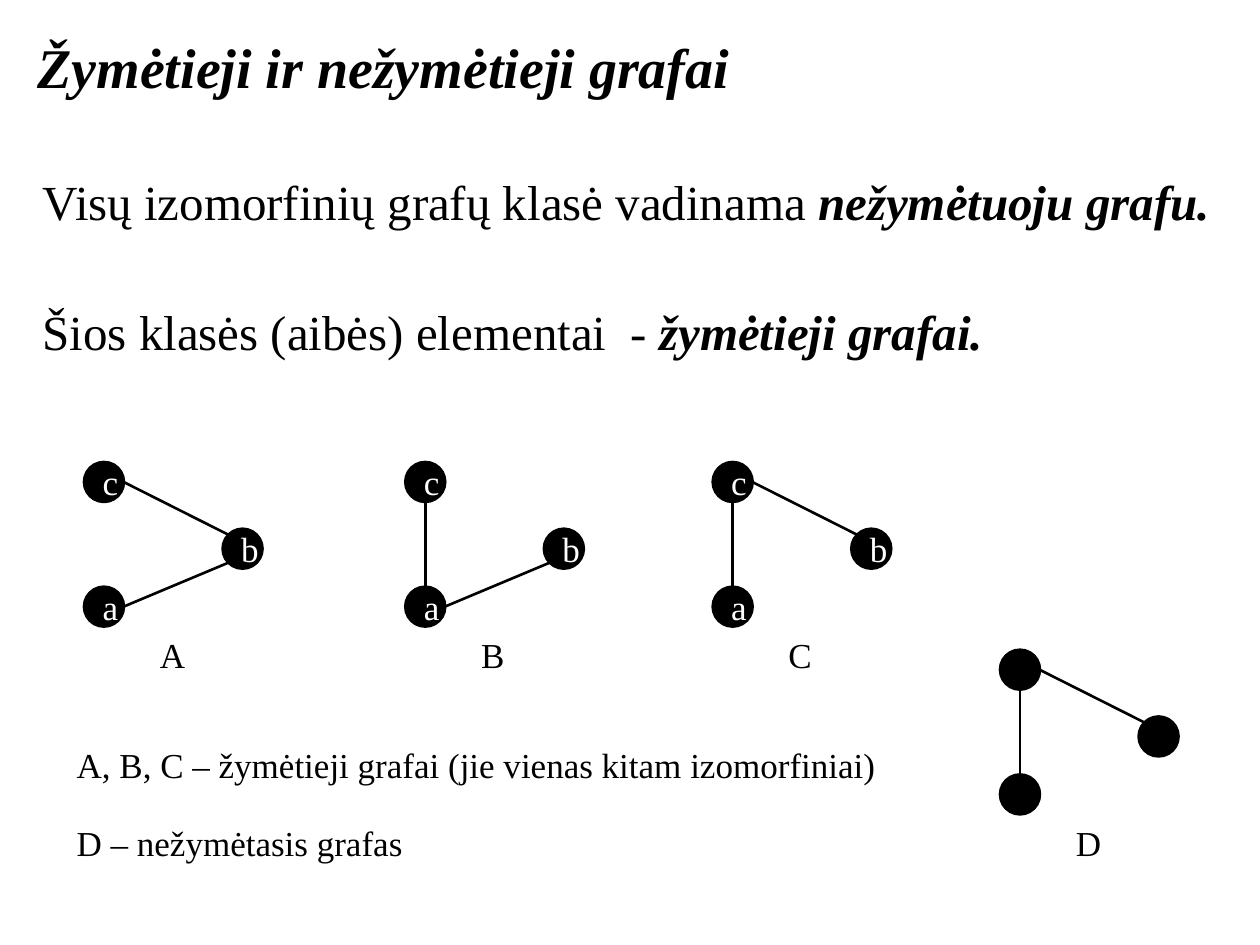
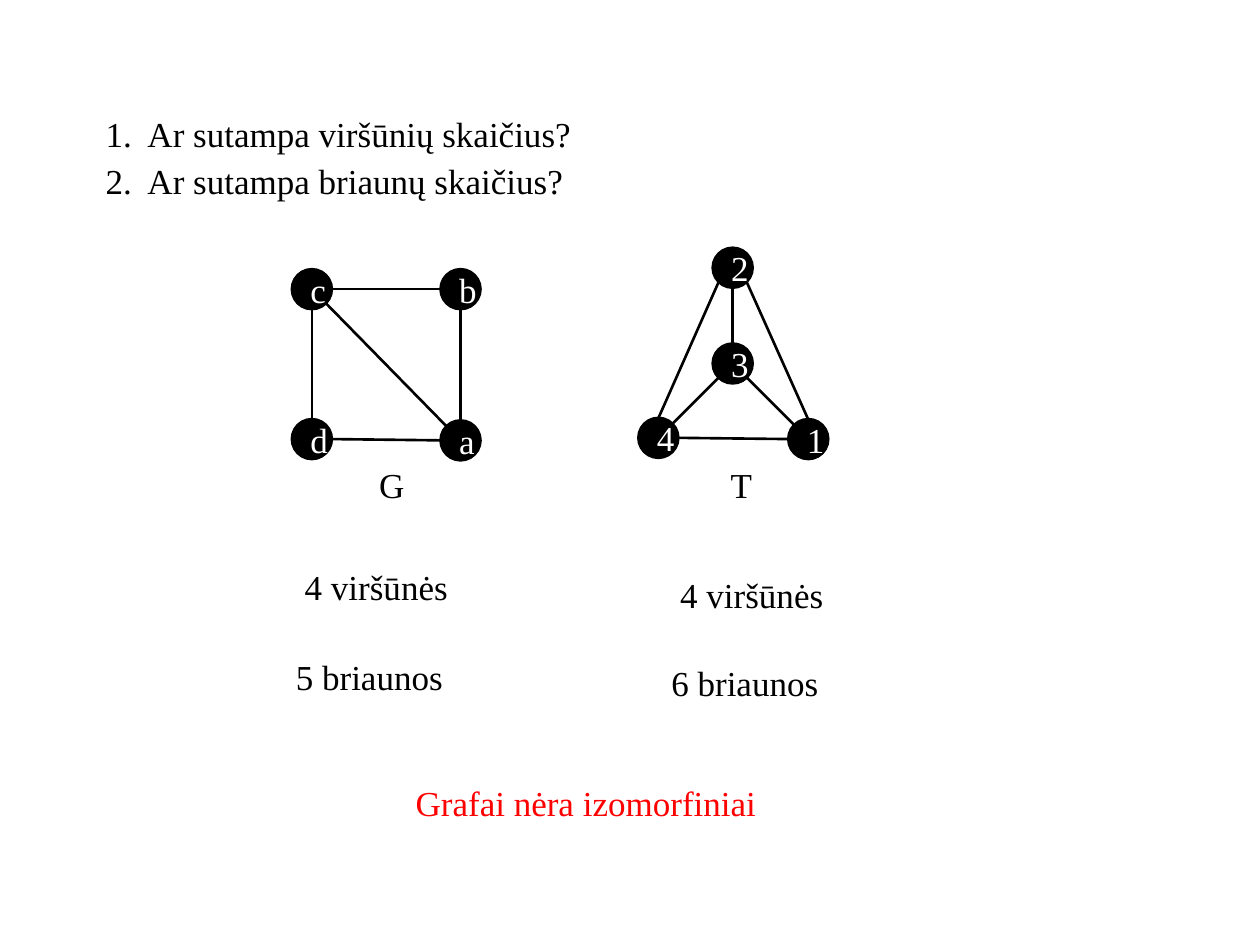
"""Build two slides on labelled, unlabelled and isomorphic graphs."""
import math

import pptx
import pptx.dml.color
import pptx.enum.shapes
import pptx.oxml.ns
import pptx.util
from lxml import etree

PX = 9144
BLACK = pptx.dml.color.RGBColor(0x00, 0x00, 0x00)
WHITE = pptx.dml.color.RGBColor(0xFF, 0xFF, 0xFF)
RED = pptx.dml.color.RGBColor(0xFF, 0x00, 0x00)
FONT = "Times New Roman"
BODY_SIZE = 20
LEAD_SIZE = 28
TITLE_SIZE = 32
VERTEX_SIZE = 31
SITE_ANGLES = {
    "right": 0, "bottom right": 45, "bottom": 90, "bottom left": 135,
    "left": 180, "top left": 225, "top": 270, "top right": 315,
}


def add_text(slide, left, top, width, height, runs, size=BODY_SIZE, colour=BLACK):
    box = slide.shapes.add_textbox(left * PX, top * PX, width * PX, height * PX)
    box.text_frame.word_wrap = True
    paragraph = box.text_frame.paragraphs[0]
    for text, emphasised in runs:
        run = paragraph.add_run()
        run.text = text
        run.font.name = FONT
        run.font.size = pptx.util.Pt(size)
        run.font.color.rgb = colour
        run.font.bold = run.font.italic = emphasised


def add_graph(slide, vertices, edges, labelled=True):
    radius = VERTEX_SIZE / 2
    for ends in edges:
        points = []
        for name, site in ends:
            left, top = vertices[name]
            angle = math.radians(SITE_ANGLES[site])
            points.append(round((left + radius + radius * math.cos(angle)) * PX))
            points.append(round((top + radius + radius * math.sin(angle)) * PX))
        edge = slide.shapes.add_connector(pptx.enum.shapes.MSO_CONNECTOR.STRAIGHT, *points)
        edge.line.color.rgb = BLACK
        edge.line.width = pptx.util.Pt(1.5)
        etree.SubElement(edge._element.spPr, pptx.oxml.ns.qn("a:effectLst"))
    for name, (left, top) in vertices.items():
        vertex = slide.shapes.add_shape(
            pptx.enum.shapes.MSO_SHAPE.OVAL,
            left * PX, top * PX, VERTEX_SIZE * PX, VERTEX_SIZE * PX)
        vertex.shadow.inherit = False
        vertex.fill.solid()
        vertex.fill.fore_color.rgb = BLACK
        vertex.line.color.rgb = BLACK
        vertex.line.width = pptx.util.Pt(2)
        if labelled:
            run = vertex.text_frame.paragraphs[0].add_run()
            run.text = name
            run.font.name = FONT
            run.font.size = pptx.util.Pt(BODY_SIZE)
            run.font.color.rgb = WHITE


presentation = pptx.Presentation()
presentation.slide_width = 1000 * PX
presentation.slide_height = 750 * PX
blank_layout = presentation.slide_layouts[6]

slide = presentation.slides.add_slide(blank_layout)
add_text(slide, 20, 21, 937, 64, [("Žymėtieji ir nežymėtieji grafai", True)], TITLE_SIZE)
add_text(slide, 24, 131, 965, 57, [
    ("Visų izomorfinių grafų klasė vadinama ", False),
    ("nežymėtuoju grafu.", True),
], LEAD_SIZE)
add_text(slide, 24, 234, 933, 57, [
    ("Šios klasės (aibės) elementai  - ", False),
    ("žymėtieji grafai.", True),
], LEAD_SIZE)

edge_cb = (("c", "right"), ("b", "top left"))
edge_ab = (("a", "right"), ("b", "bottom left"))
edge_ca = (("c", "bottom"), ("a", "top"))
for caption, left, top, edges, labelled in [
    ("A", 67, 367, [edge_cb, edge_ab], True),
    ("B", 322, 367, [edge_ca, edge_ab], True),
    ("C", 566, 367, [edge_ca, edge_cb], True),
    ("D", 794, 516, [edge_ca, edge_cb], False),
]:
    vertices = {"c": (left, top), "a": (left, top + 99), "b": (left + 110, top + 53)}
    add_graph(slide, vertices, edges, labelled)
    add_text(slide, left + 50, top + 131, 46, 44, [(caption, False)])

for top, text in [
    (585, "A, B, C – žymėtieji grafai (jie vienas kitam izomorfiniai)"),
    (647, "D – nežymėtasis grafas"),
]:
    add_text(slide, 51, top, 657, 44, [(text, False)])

slide = presentation.slides.add_slide(blank_layout)
add_graph(slide, {"c": (232, 214), "b": (350, 214), "d": (232, 333), "a": (350, 334)}, [
    (("c", "right"), ("b", "left")),
    (("d", "right"), ("a", "left")),
    (("b", "bottom"), ("a", "top")),
    (("c", "bottom right"), ("a", "top left")),
    (("c", "bottom"), ("d", "top")),
])
add_graph(slide, {"3": (566, 273), "2": (566, 197), "4": (507, 332), "1": (626, 333)}, [
    (("3", "bottom left"), ("4", "top right")),
    (("4", "top"), ("2", "bottom left")),
    (("2", "bottom right"), ("1", "top")),
    (("3", "bottom right"), ("1", "top left")),
    (("2", "bottom"), ("3", "top")),
    (("1", "left"), ("4", "right")),
])
for left, top, width, text, colour in [
    (74, 84, 866, "1.  Ar sutampa viršūnių skaičius?", BLACK),
    (74, 122, 866, "2.  Ar sutampa briaunų skaičius?", BLACK),
    (291, 363, 31, "G", BLACK),
    (570, 363, 31, "T", BLACK),
    (232, 444, 156, "4 viršūnės", BLACK),
    (225, 515, 156, "5 briaunos", BLACK),
    (530, 450, 156, "4 viršūnės", BLACK),
    (523, 520, 156, "6 briaunos", BLACK),
    (320, 615, 449, "Grafai nėra izomorfiniai", RED),
]:
    add_text(slide, left, top, width, 44, [(text, False)], colour=colour)

presentation.save("out.pptx")
